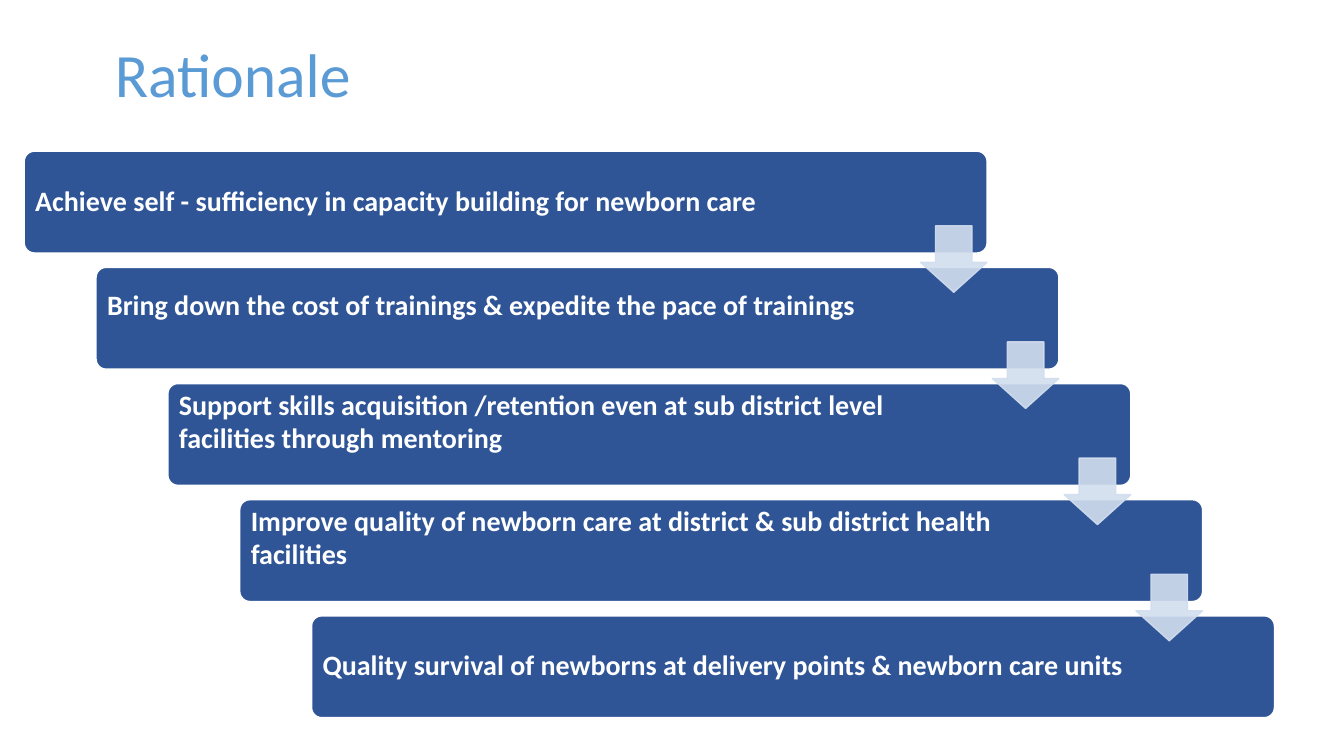
from pptx import Presentation
from pptx.dml.color import RGBColor
from pptx.enum.shapes import MSO_SHAPE as Shape
from pptx.enum.text import MSO_ANCHOR as Anchor, PP_ALIGN as Align
from pptx.oxml.ns import qn
from pptx.util import Inches, Pt
from lxml.etree import SubElement


def rgb(code):
    return RGBColor.from_string(code)


def write(sp, text, spacing, margins, font):
    tf = sp.text_frame
    tf.word_wrap = True
    for side, size in zip(("left", "top", "right", "bottom"), margins):
        setattr(tf, "margin_" + side, Inches(size))
    p = tf.paragraphs[0]
    p.alignment, p.line_spacing = Align.LEFT, spacing
    r = p.add_run()
    r.text = text
    r.font.color.rgb = rgb(font["color"])
    for name in ("name", "size", "bold"):
        setattr(r.font, name, font[name])


prs = Presentation()
prs.slide_width, prs.slide_height = Inches(13.33), Inches(7.5)
s = prs.slides.add_slide(prs.slide_layouts[6])

TITLE = {"name": "Calibri", "size": Pt(44), "bold": False, "color": "5B9BD5"}
STEP = {"name": "Calibri", "size": Pt(20), "bold": True, "color": "FFFFFF"}

# Staircase grid: first bar, then one step right and down for each row
LEFT, TOP, BAR_W, BAR_H = 0.24, 1.5, 9.55, 1.01
DX, DY = 0.7125, 1.1525
ARROW = 0.66
LIFT = 0.27  # bottom margin of the bars whose text sits high

# Text, line spacing, bottom margin
steps = [
    ("Achieve self - sufficiency in capacity building for newborn care", 0.9, 0),
    ("Bring down the cost of trainings & expedite the pace of trainings", 1.0, LIFT),
    ("Support skills acquisition /retention even at sub district level "
     "facilities through mentoring", 1.0, LIFT),
    ("Improve quality of newborn care at district & sub district health "
     "facilities", 1.0, LIFT),
    ("Quality survival of newborns at delivery points & newborn care units", 0.9, 0),
]

# Bars
for i, (text, spacing, bottom) in enumerate(steps):
    sp = s.shapes.add_shape(Shape.ROUNDED_RECTANGLE, Inches(LEFT + i * DX),
                            Inches(TOP + i * DY), Inches(BAR_W), Inches(BAR_H))
    sp.shadow.inherit = False
    sp.adjustments[0] = 0.1
    sp.fill.solid()
    sp.fill.fore_color.rgb = rgb("2F5597")
    sp.line.color.rgb = rgb("FFFFFF")
    sp.line.width = Pt(1)
    sp.text_frame.vertical_anchor = Anchor.MIDDLE
    write(sp, text, spacing, (0.08, 0, 1.45, bottom), STEP)

# Arrows from each bar to the next, right-aligned with the upper bar
for i in range(len(steps) - 1):
    sp = s.shapes.add_shape(Shape.DOWN_ARROW, Inches(LEFT + BAR_W - ARROW + i * DX),
                            Inches(TOP + 0.74 + i * DY), Inches(ARROW), Inches(ARROW))
    sp.shadow.inherit = False
    sp.adjustments[0], sp.adjustments[1] = 0.55, 0.45
    sp.fill.solid()
    sp.fill.fore_color.rgb = rgb("D2DEEF")
    sp.line.color.rgb = rgb("D2DEEF")
    sp.line.width = Pt(1)
    for color in sp._element.spPr.iter(qn("a:srgbClr")):
        SubElement(color, qn("a:alpha")).set("val", "90000")

# Title
title = s.shapes.add_textbox(Inches(1.04), Inches(0.39), Inches(11.5), Inches(0.98))
write(title, "Rationale", 0.9, (0.1, 0.05, 0.1, 0.05), TITLE)

prs.save("out.pptx")
